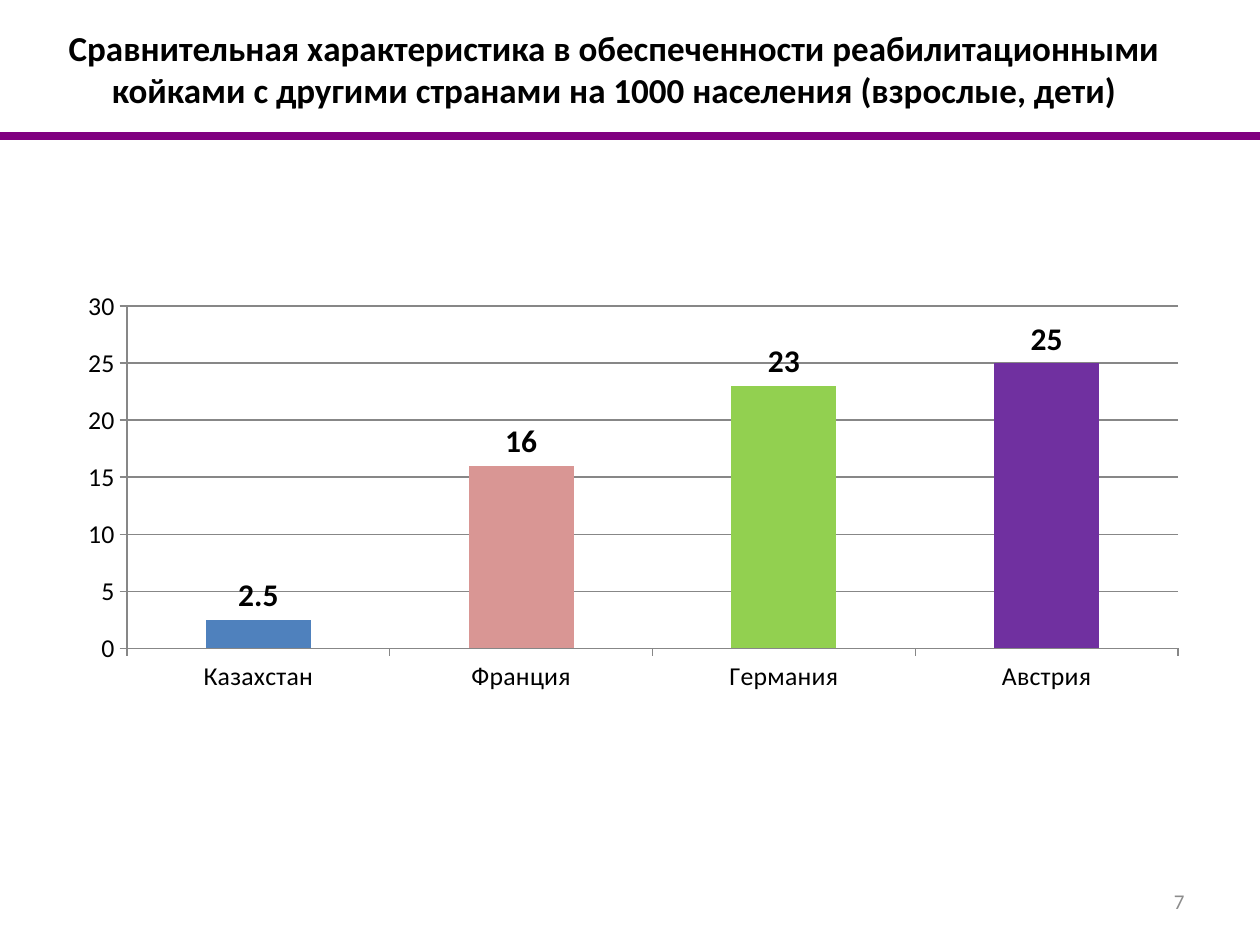
"""Build a slide comparing rehabilitation bed provision across countries."""
from lxml import etree
from pptx import Presentation, util as u
from pptx.chart.data import CategoryChartData
from pptx.dml.color import RGBColor
from pptx.enum import chart as ch, shapes, text
from pptx.oxml import parse_xml
from pptx.oxml.ns import nsdecls, qn

BLACK = RGBColor(0, 0, 0)
GRAY = RGBColor(0x8C, 0x8C, 0x8C)
AXIS_GRAY = RGBColor(0x87, 0x87, 0x87)
PURPLE = RGBColor(0x80, 0, 0x80)
FONT = "Calibri"

TITLE = ("Сравнительная характеристика в обеспеченности реабилитационными "
         "койками с другими странами на 1000 населения (взрослые, дети)")
PAGE_NUMBER = "7"
SERIES_NAME = "Койки"
BEDS = [
    ("Казахстан", 2.5, RGBColor(0x4F, 0x81, 0xBD)),
    ("Франция", 16, RGBColor(0xD9, 0x96, 0x94)),
    ("Германия", 23, RGBColor(0x92, 0xD0, 0x50)),
    ("Австрия", 25, RGBColor(0x70, 0x30, 0xA0)),
]
WIDTH, HEIGHT = 10, 7.5
HEADER = 1.08
PLOT_SHARES = {"x": 0.05, "y": 0.2, "w": 0.93, "h": 0.69}


def inches(*lengths):
    return [u.Inches(length) for length in lengths]


def style_font(font, size, color=BLACK, bold=False):
    font.name, font.size, font.bold = FONT, u.Pt(size), bold
    font.color.rgb = color


def write(box, words, size, color=BLACK, bold=False, align=text.PP_ALIGN.CENTER):
    frame = box.text_frame
    frame.word_wrap = True
    frame.auto_size = text.MSO_AUTO_SIZE.NONE
    frame.vertical_anchor = text.MSO_ANCHOR.MIDDLE
    para = frame.paragraphs[0]
    para.alignment = align
    span = para.add_run()
    span.text = words
    style_font(span.font, size, color, bold)


def add_bed_chart(page):
    data = CategoryChartData()
    data.categories = [country for country, _, _ in BEDS]
    data.add_series(SERIES_NAME, [beds for _, beds, _ in BEDS])
    chart = page.shapes.add_chart(
        ch.XL_CHART_TYPE.COLUMN_CLUSTERED, *inches(0.56, 1.64, 8.97, 3.94), data).chart
    chart.has_title = chart.has_legend = False
    style_font(chart.font, 14.7)

    plot = chart.plots[0]
    plot.gap_width = 150
    plot.vary_by_categories = False
    plot.has_data_labels = True
    labels = plot.data_labels
    labels.show_value = True
    labels.position = ch.XL_LABEL_POSITION.OUTSIDE_END
    style_font(labels.font, 18, bold=True)
    for index, (_, _, color) in enumerate(BEDS):
        fill = plot.series[0].points[index].format.fill
        fill.solid()
        fill.fore_color.rgb = color

    values = chart.value_axis
    values.minimum_scale, values.maximum_scale, values.major_unit = 0, 30, 5
    values.has_major_gridlines = True
    for line in (values.format.line, values.major_gridlines.format.line,
                 chart.category_axis.format.line):
        line.color.rgb = AXIS_GRAY
        line.width = u.Pt(0.75)
    for axis in (values, chart.category_axis):
        axis.major_tick_mark = ch.XL_TICK_MARK.OUTSIDE

    shares = "".join(f'<c:{key} val="{share}"/>' for key, share in PLOT_SHARES.items())
    layout = parse_xml(
        f'<c:layout {nsdecls("c")}><c:manualLayout><c:layoutTarget val="inner"/>'
        f'<c:xMode val="edge"/><c:yMode val="edge"/>{shares}</c:manualLayout></c:layout>')
    area = chart.element.find(".//" + qn("c:plotArea"))
    for old in area.findall(qn("c:layout")):
        area.remove(old)
    area.insert(0, layout)


def main():
    deck = Presentation()
    deck.slide_width, deck.slide_height = inches(WIDTH, HEIGHT)
    page = deck.slides.add_slide(deck.slide_layouts[5])

    add_bed_chart(page)
    number = page.shapes.add_textbox(*inches(7.17, 6.95, 2.33, 0.4))
    write(number, PAGE_NUMBER, 12, GRAY, align=text.PP_ALIGN.RIGHT)

    title = page.shapes.title
    title.left, title.top, title.width, title.height = inches(0.25, 0, 9.25, HEADER)
    write(title, TITLE, 20, bold=True)

    rule = page.shapes.add_connector(
        shapes.MSO_CONNECTOR.STRAIGHT, *inches(0, HEADER, WIDTH, HEADER))
    rule.line.color.rgb = PURPLE
    rule.line.width = u.Pt(4.5)
    etree.SubElement(rule.element.spPr, qn("a:effectLst"))
    deck.save("out.pptx")


if __name__ == "__main__":
    main()
